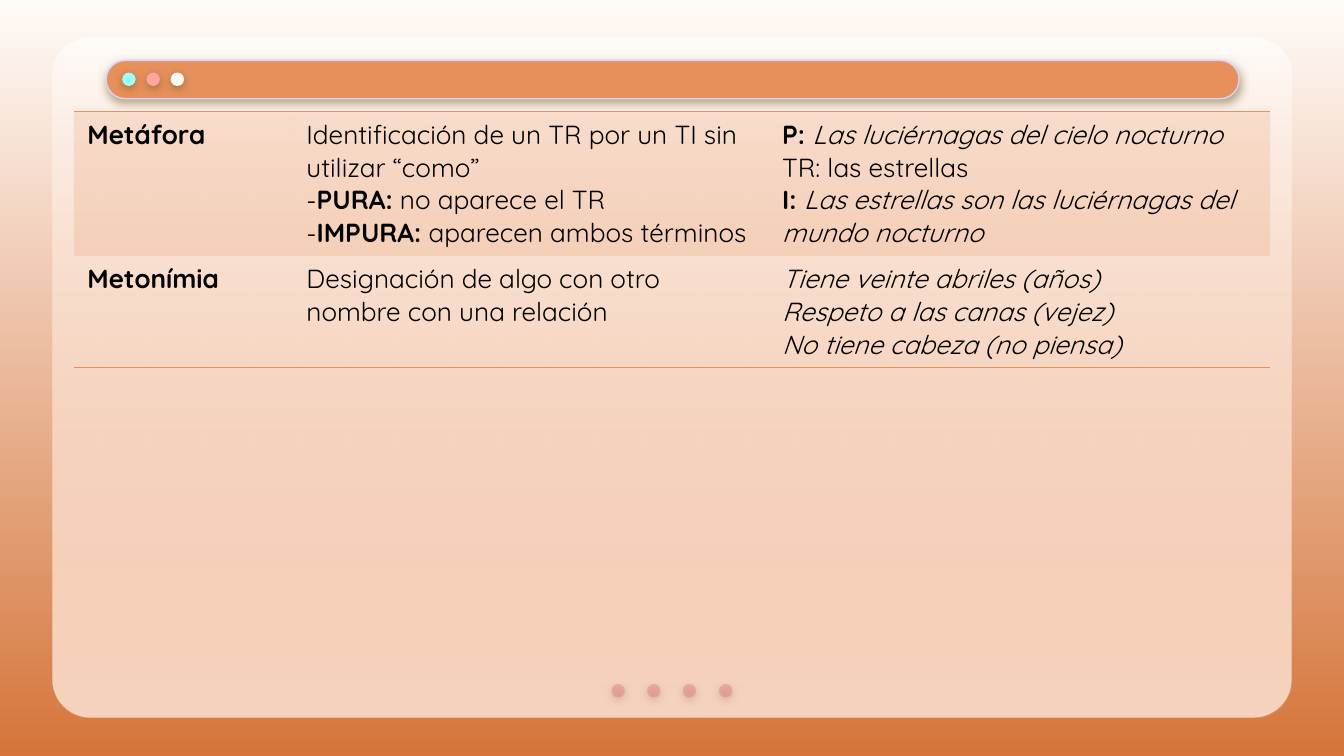
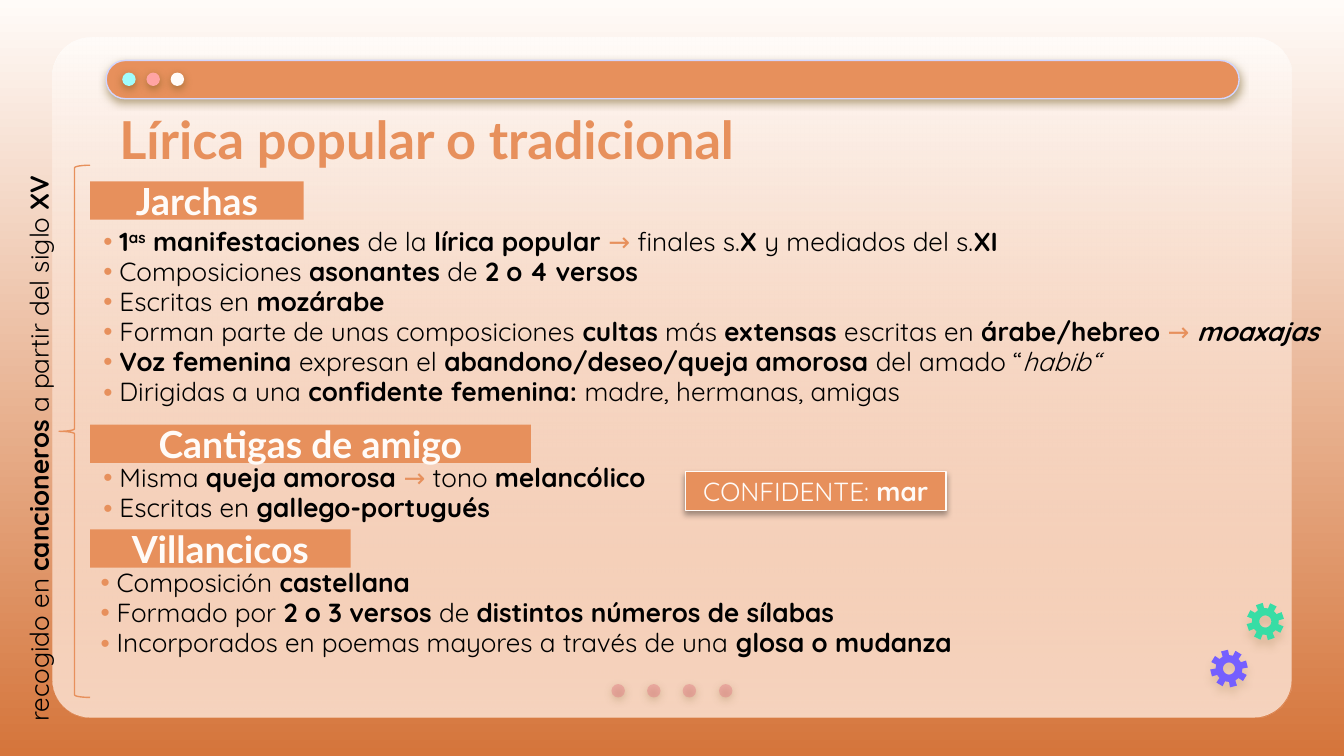
"""Build two Spanish literature slides: figures of speech and popular lyric poetry."""
from math import cos, radians, sin

from lxml.etree import SubElement
from pptx import Presentation
from pptx.dml.color import RGBColor
from pptx.enum.shapes import MSO_SHAPE
from pptx.enum.text import MSO_ANCHOR, MSO_AUTO_SIZE, PP_ALIGN
from pptx.oxml.ns import qn
from pptx.util import Pt

PX = 4572
ORANGE, CREAM, BLACK, BROWN = "E7905C", "FFFBF8", "000000", "6D5416"
SOFT_SHADOW = (BROWN, 50, 4.5, 1.5)
hex_color = RGBColor.from_string


def style_shape(shape, fill=None, line=None, shadow=None, alpha=None):
    """Apply fill, outline, shadow and opacity to a shape."""
    shape.shadow.inherit = False
    if isinstance(fill, tuple):
        shape.fill.gradient()
        shape.fill.gradient_angle = 270
        for stop, color in zip(shape.fill.gradient_stops, fill):
            stop.color.rgb = hex_color(color)
    elif fill:
        shape.fill.solid()
        shape.fill.fore_color.rgb = hex_color(fill)
    else:
        shape.fill.background()
    properties = shape._element.spPr
    if alpha:
        last_color = list(properties.iter(qn("a:srgbClr")))[-1]
        SubElement(last_color, qn("a:alpha"), val=str(alpha * 1000))
    if line:
        shape.line.color.rgb = hex_color(line)
        shape.line.width = Pt(0.75)
    else:
        shape.line.fill.background()
    if shadow:
        color, opacity, blur, distance = shadow
        outer = SubElement(properties.find(qn("a:effectLst")), qn("a:outerShdw"),
                           blurRad=str(Pt(blur)), dist=str(Pt(distance)),
                           dir="5400000", algn="bl", rotWithShape="0")
        shadow_color = SubElement(outer, qn("a:srgbClr"), val=color)
        SubElement(shadow_color, qn("a:alpha"), val=str(opacity * 1000))


def write_text(frame, paragraphs, size=14, name="Quicksand", color=BLACK,
               bullet=False, frame_format={}, paragraph_format={}):
    """Write runs styled by letter: b bold, i italic, a arrow, s superscript."""
    for key, value in frame_format.items():
        setattr(frame, key, value)
    for index, runs in enumerate(paragraphs):
        paragraph = frame.add_paragraph() if index else frame.paragraphs[0]
        if bullet:
            properties = paragraph._p.get_or_add_pPr()
            properties.set("marL", str(24 * PX))
            properties.set("indent", str(-24 * PX))
            bullet_color = SubElement(properties, qn("a:buClr"))
            SubElement(bullet_color, qn("a:srgbClr"), val=ORANGE)
            SubElement(properties, qn("a:buFont"), typeface="Arial")
            SubElement(properties, qn("a:buChar"), char="•")
        for key, value in paragraph_format.items():
            setattr(paragraph, key, value)
        for text, style in runs:
            run = paragraph.add_run()
            run.text = text
            run_format = {"size": Pt(size), "name": name,
                          "bold": "b" in style, "italic": "i" in style}
            for key, value in run_format.items():
                setattr(run.font, key, value)
            run.font.color.rgb = hex_color(ORANGE if "a" in style else color)
            if "s" in style:
                run.font._element.set("baseline", "30000")


presentation = Presentation()
presentation.slide_width, presentation.slide_height = 2000 * PX, 1125 * PX

footer_dots = [(910 + 160 * i // 3, 1018, "E27B83", 44) for i in range(4)]
window_dots = [(182 + 36 * i, 108, color, None)
               for i, color in enumerate(("A0FDFD", "FFA4A4", CREAM))]

for number in range(2):
    slide = presentation.slides.add_slide(presentation.slide_layouts[6])
    background = slide.background.fill
    background.gradient()
    background.gradient_angle = 270
    for stop, color in zip(background.gradient_stops, (CREAM, "D5753B")):
        stop.color.rgb = hex_color(color)
    for fill, alpha in ((CREAM, None), ((CREAM, ORANGE), 37)):
        panel = slide.shapes.add_shape(MSO_SHAPE.ROUNDED_RECTANGLE,
                                       78 * PX, 56 * PX, 1844 * PX, 1012 * PX)
        panel.adjustments[0] = 0.056
        style_shape(panel, fill, alpha=alpha)
    bar = slide.shapes.add_shape(MSO_SHAPE.ROUNDED_RECTANGLE,
                                 158 * PX, 90 * PX, 1686 * PX, 57 * PX)
    bar.adjustments[0] = 0.5
    style_shape(bar, ORANGE, "D2D6FF", SOFT_SHADOW)
    for left, top, color, alpha in footer_dots + window_dots:
        dot = slide.shapes.add_shape(MSO_SHAPE.OVAL, left * PX, top * PX, 20 * PX, 20 * PX)
        style_shape(dot, color, shadow=SOFT_SHADOW, alpha=alpha)

figures_slide, lyric_slide = presentation.slides

figures = [
    [
        [[("Metáfora", "b")]],
        [[("Identificación de un TR por un TI sin utilizar “como”", "")],
         [("-", ""), ("PURA:", "b"), (" no aparece el TR", "")],
         [("-", ""), ("IMPURA:", "b"), (" aparecen ambos términos", "")]],
        [[("P: ", "b"), ("Las luciérnagas del cielo nocturno", "i")],
         [("TR: las estrellas", "")],
         [("I: ", "b"), ("Las estrellas son las luciérnagas del mundo nocturno", "i")]],
    ],
    [
        [[("Metonímia", "b")]],
        [[("Designación de algo con otro nombre con una relación", "")]],
        [[("Tiene veinte abriles (años)", "i")],
         [("Respeto a las canas (vejez)", "i")],
         [("No tiene cabeza (no piensa)", "i")]],
    ],
]
table = figures_slide.shapes.add_table(2, 3, 110 * PX, 166 * PX, 1780 * PX, 164 * PX).table
table.first_row = table.horz_banding = False
table._tbl.tblPr.find(qn("a:tableStyleId")).text = "{2D5ABB26-0587-4C30-8999-92F81FD0307C}"
for column, width in zip(table.columns, (326, 708, 746)):
    column.width = width * PX
for row, contents in enumerate(figures):
    for column, paragraphs in enumerate(contents):
        cell = table.cell(row, column)
        write_text(cell.text_frame, paragraphs)
        properties = cell._tc.get_or_add_tcPr()
        border = SubElement(properties, qn("a:lnB" if row else "a:lnT"), w=str(Pt(1)))
        border_fill = SubElement(border, qn("a:solidFill"))
        SubElement(border_fill, qn("a:srgbClr"), val=ORANGE)
        if row:
            cell.fill.background()
        else:
            cell.fill.solid()
            cell.fill.fore_color.rgb = hex_color(ORANGE)
            cell_color = properties.find(qn("a:solidFill")).find(qn("a:srgbClr"))
            SubElement(cell_color, qn("a:alpha"), val="20000")

wide_margins = {f"margin_{side}": 20 * PX for side in ("left", "top", "right", "bottom")}
middle = {"vertical_anchor": MSO_ANCHOR.MIDDLE, "word_wrap": True}
unwrapped = {"word_wrap": False, "auto_size": MSO_AUTO_SIZE.SHAPE_TO_FIT_TEXT}
centered = {"alignment": PP_ALIGN.CENTER}

title = lyric_slide.shapes.add_textbox(158 * PX, 144 * PX, 1220 * PX, 126 * PX)
write_text(title.text_frame, [[("Lírica popular o tradicional", "b")]], 28, "Lato", ORANGE,
           frame_format=middle | wide_margins)

gears = [(1883, 925, 26, "37DDA5", (BROWN, 16, 4.5, 4.5)),
         (1829, 995, 31, "755FFF", (BROWN, 15, 4.5, 3.8))]
for center_x, center_y, phase, color, shadow in gears:
    teeth = [(radius, phase + 45 * tooth + offset) for tooth in range(8)
             for radius, offset in ((20, -14), (28, -11), (28, 11), (20, 14))]
    hole = [(9, -15 * step) for step in range(24)]
    outline, opening = [[((center_x + radius * cos(radians(angle))) * PX,
                          (center_y + radius * sin(radians(angle))) * PX)
                         for radius, angle in contour] for contour in (teeth, hole)]
    builder = lyric_slide.shapes.build_freeform(*outline[0], scale=1)
    builder.add_line_segments(outline[1:])
    builder.move_to(*opening[0])
    builder.add_line_segments(opening[1:])
    style_shape(builder.convert_to_shape(), color, shadow=shadow)

sections = [
    ("Jarchas", (134, 270, 318), (134, 328, 1890, 302), [
        [("1", "b"), ("as", "bs"), (" manifestaciones", "b"), (" de la ", ""),
         ("lírica popular ", "b"), ("→ ", "a"), ("finales s.", ""), ("X ", "b"),
         ("y mediados del s.", ""), ("XI", "b")],
        [("Composiciones ", ""), ("asonantes ", "b"), ("de ", ""), ("2 o 4 versos", "b")],
        [("Escritas en ", ""), ("mozárabe", "b")],
        [("Forman parte de unas composiciones ", ""), ("cultas", "b"), (" más ", ""),
         ("extensas ", "b"), ("escritas en ", ""), ("árabe/hebreo ", "b"),
         ("→ ", "a"), ("moaxajas", "bi")],
        [("Voz femenina ", "b"), ("expresan el ", ""),
         ("abandono/deseo/queja amorosa", "b"), (" del amado “", ""), ("habib“", "i")],
        [("Dirigidas a una ", ""), ("confidente femenina:", "b"),
         (" madre, hermanas, amigas", "")],
    ]),
    ("Cantigas de amigo", (134, 632, 656), (134, 680, 864, 114), [
        [("Misma ", ""), ("queja amorosa ", "b"), ("→ ", "a"), ("tono ", ""),
         ("melancólico", "b")],
        [("Escritas en ", ""), ("gallego-portugués", "b")],
    ]),
    ("Villancicos", (134, 788, 388), (130, 836, 1328, 162), [
        [("Composición ", ""), ("castellana", "b")],
        [("Formado por ", ""), ("2 o 3 versos", "b"), (" de ", ""),
         ("distintos números de sílabas", "b")],
        [("Incorporados en poemas mayores a través de una ", ""), ("glosa o mudanza", "b")],
    ]),
]
for heading, (left, top, width), box, points in sections:
    label = lyric_slide.shapes.add_shape(MSO_SHAPE.RECTANGLE,
                                         left * PX, top * PX, width * PX, 57 * PX)
    style_shape(label, ORANGE)
    write_text(label.text_frame, [[(heading, "b")]], 20, "Lato", CREAM,
               frame_format=middle | wide_margins, paragraph_format=centered)
    body = lyric_slide.shapes.add_textbox(*(length * PX for length in box))
    write_text(body.text_frame, points, bullet=True, frame_format=unwrapped,
               paragraph_format={"line_spacing": 0.96})

brace = lyric_slide.shapes.add_shape(MSO_SHAPE.LEFT_BRACE, 88 * PX, 246 * PX, 46 * PX, 792 * PX)
style_shape(brace, line=ORANGE)

side_note = lyric_slide.shapes.add_textbox(-376 * PX, 626 * PX, 868 * PX, 68 * PX)
side_note.rotation = 270
write_text(side_note.text_frame,
           [[("recogido en ", ""), ("cancioneros", "b"), (" a partir del siglo ", ""),
             ("XV", "b")]], frame_format=unwrapped)

confidant = lyric_slide.shapes.add_shape(MSO_SHAPE.RECTANGLE,
                                         1020 * PX, 702 * PX, 388 * PX, 58 * PX)
style_shape(confidant, ORANGE, CREAM, (BLACK, 35, 3.1, 1.8))
write_text(confidant.text_frame, [[("CONFIDENTE: ", ""), ("mar", "b")]], color=CREAM,
           frame_format=middle, paragraph_format=centered)

presentation.save("out.pptx")
